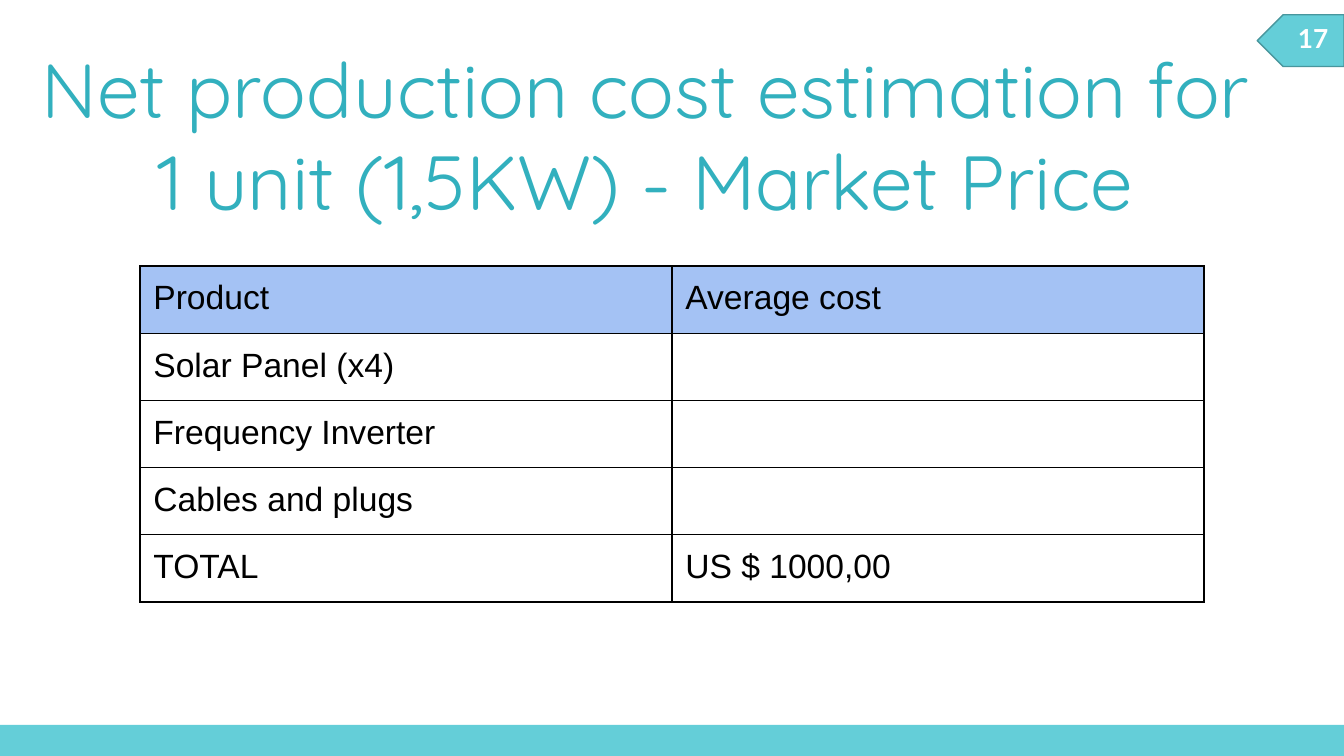
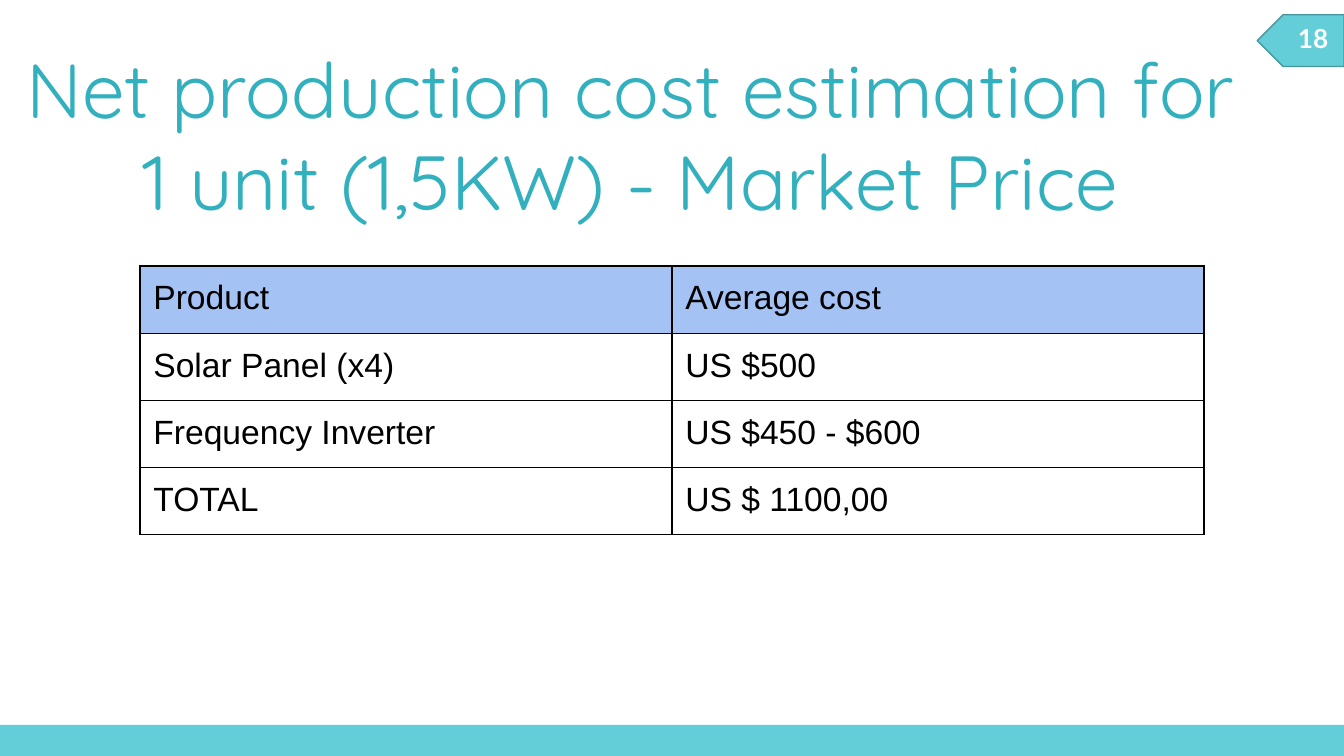
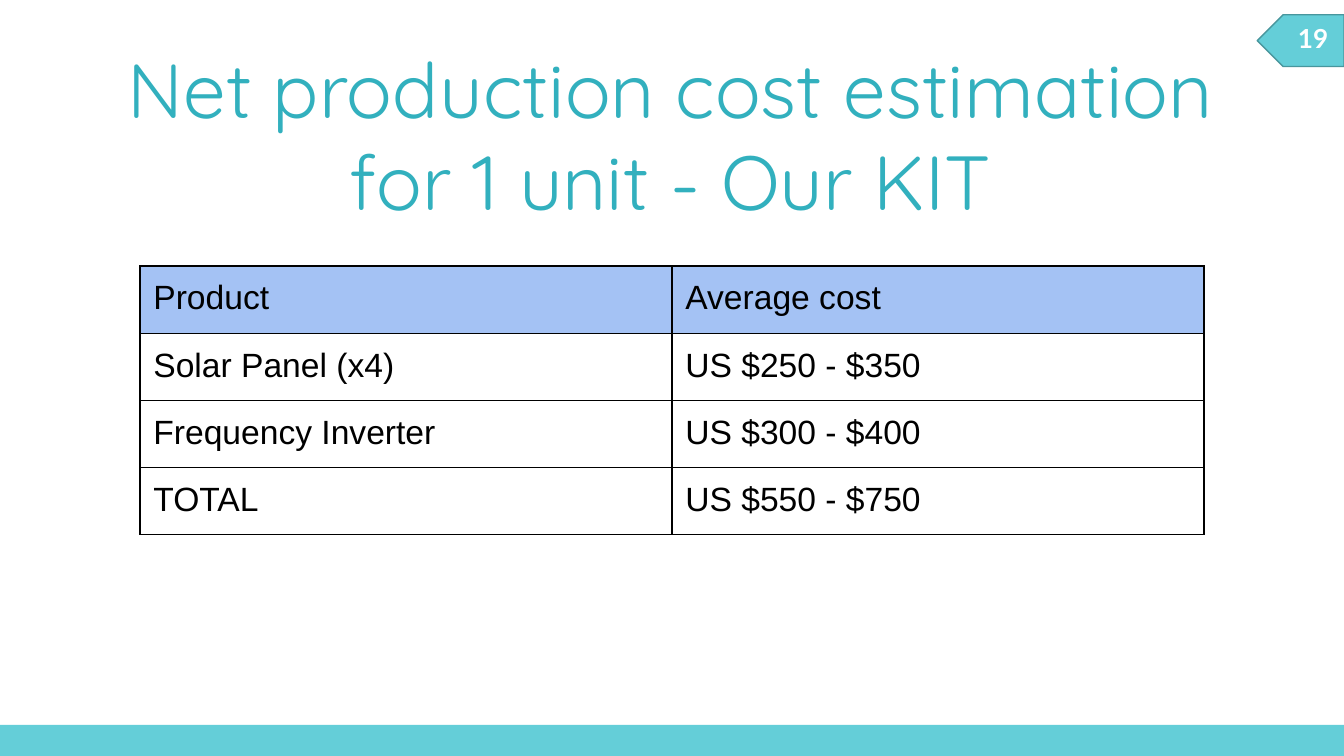
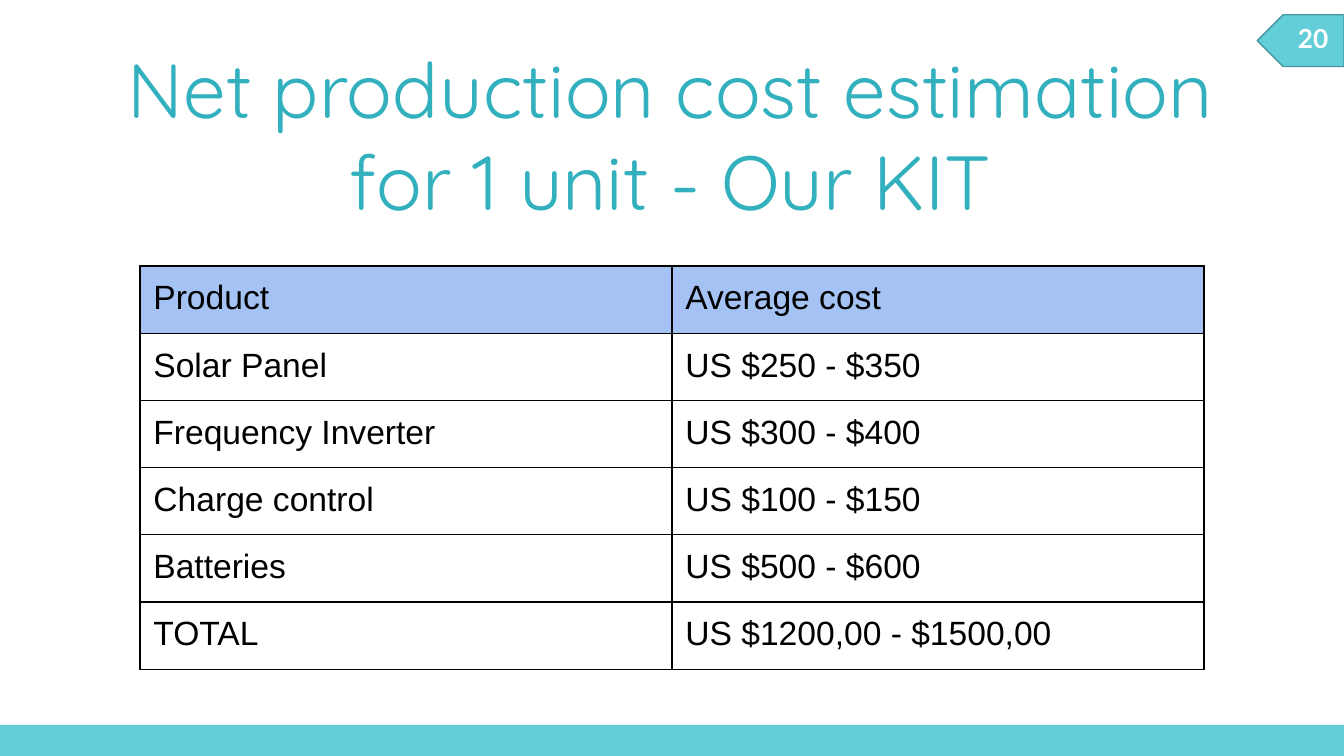
from lxml.etree import SubElement
from pptx import Presentation
from pptx.dml.color import RGBColor
from pptx.enum.shapes import MSO_SHAPE
from pptx.enum.text import MSO_ANCHOR, MSO_AUTO_SIZE, PP_ALIGN
from pptx.oxml.ns import qn
from pptx.util import Pt

MARKET = "Net production cost estimation for 1 unit (1,5KW) - Market Price"
KIT = "Net production cost estimation for 1 unit - Our KIT"
HEADER = ("Product", "Average cost")

SLIDES = [
    dict(title=MARKET, left=14.4, width=893.5, height=139.7, rows=[
        ("Solar Panel (x4)", ""),
        ("Frequency Inverter", ""),
        ("Cables and plugs", ""),
        ("TOTAL", "US $ 1000,00")]),
    dict(title=MARKET, left=0, width=900.7, height=139.7, rows=[
        ("Solar Panel (x4)", "US $500"),
        ("Frequency Inverter", "US $450 - $600"),
        ("TOTAL", "US $ 1100,00")]),
    dict(title=KIT, left=79.2, width=799.2, height=139.7, rows=[
        ("Solar Panel (x4)", "US $250 - $350"),
        ("Frequency Inverter", "US $300 - $400"),
        ("TOTAL", "US $550 - $750")]),
    dict(title=KIT, left=79.2, width=799.2, height=206, rows=[
        ("Solar Panel", "US $250 - $350"),
        ("Frequency Inverter", "US $300 - $400"),
        ("Charge control", "US $100 - $150"),
        ("Batteries", "US $500 - $600"),
        ("TOTAL", "US $1200,00 - $1500,00")]),
]


class Deck:
    """Holds the deck style and the slide being built."""

    colors = dict(band="64CED8", edge="48969D", title="32B0BE",
                  header="A4C2F4", white="FFFFFF", black="000000")
    fonts = dict(
        title=dict(name="Quicksand", size=Pt(54.7), color="title"),
        number=dict(name="Lato", size=Pt(18.7), bold=True, color="white"),
        cell=dict(name="Arial", size=Pt(24), color="black"))

    def __init__(self, width, height):
        self.prs = Presentation()
        self.prs.slide_width, self.prs.slide_height = Pt(width), Pt(height)
        self.s = None

    def rgb(self, color):
        return RGBColor.from_string(self.colors[color])

    def new_slide(self, number):
        self.s = self.prs.slides.add_slide(self.prs.slide_layouts[6])
        badge = self.shape(MSO_SHAPE.PENTAGON, 898, 10.5, 62, 37, "edge")
        badge.rotation = 180
        self.shape(MSO_SHAPE.RECTANGLE, 0, 517.7, 960, 22.3)
        self.text(str(number), 920, 7, 45.4, 39.6, "number",
                  vertical_anchor=MSO_ANCHOR.MIDDLE)

    def shape(self, kind, x, y, w, h, line=None):
        sp = self.s.shapes.add_shape(kind, Pt(x), Pt(y), Pt(w), Pt(h))
        sp.shadow.inherit = False
        sp.fill.solid()
        sp.fill.fore_color.rgb = self.rgb("band")
        if line:
            sp.line.color.rgb = self.rgb(line)
            sp.line.width = Pt(1)
        else:
            sp.line.fill.background()
        return sp

    def run(self, p, text, style):
        r = p.add_run()
        r.text = text
        for key, value in self.fonts[style].items():
            if key == "color":
                r.font.color.rgb = self.rgb(value)
            else:
                setattr(r.font, key, value)

    def text(self, text, x, y, w, h, style, align=PP_ALIGN.LEFT, **frame):
        sp = self.s.shapes.add_textbox(Pt(x), Pt(y), Pt(w), Pt(h))
        tf = sp.text_frame
        for key, value in dict(word_wrap=True, **frame).items():
            setattr(tf, key, value)
        p = tf.paragraphs[0]
        p.alignment = align
        self.run(p, text, style)

    def title(self, text, x, w, h):
        self.text(text, x, 26.6, w, h, "title", PP_ALIGN.CENTER,
                  auto_size=MSO_AUTO_SIZE.SHAPE_TO_FIT_TEXT)

    def borders(self, cell):
        tc_pr = cell._tc.get_or_add_tcPr()
        for side in ("lnL", "lnR", "lnT", "lnB"):
            ln = SubElement(tc_pr, qn(f"a:{side}"), w=str(Pt(1)))
            fill = SubElement(ln, qn("a:solidFill"))
            SubElement(fill, qn("a:srgbClr"), val=self.colors["black"])

    def table(self, rows, x=100, y=190, col_width=380, row_height=48):
        cols = len(rows[0])
        table = self.s.shapes.add_table(
            len(rows), cols, Pt(x), Pt(y),
            Pt(col_width * cols), Pt(row_height * len(rows))).table
        table.first_row = table.horz_banding = False
        for i, row in enumerate(rows):
            for j, text in enumerate(row):
                cell = table.cell(i, j)
                for side in ("left", "right", "top", "bottom"):
                    setattr(cell, f"margin_{side}", Pt(9.6))
                self.borders(cell)
                if i == 0:
                    cell.fill.solid()
                    cell.fill.fore_color.rgb = self.rgb("header")
                else:
                    cell.fill.background()
                if text:
                    self.run(cell.text_frame.paragraphs[0], text, "cell")


def main():
    deck = Deck(960, 540)
    for number, item in enumerate(SLIDES, start=17):
        deck.new_slide(number)
        deck.title(item["title"], item["left"], item["width"], item["height"])
        deck.table([HEADER] + item["rows"])
    deck.prs.save("out.pptx")


if __name__ == "__main__":
    main()
